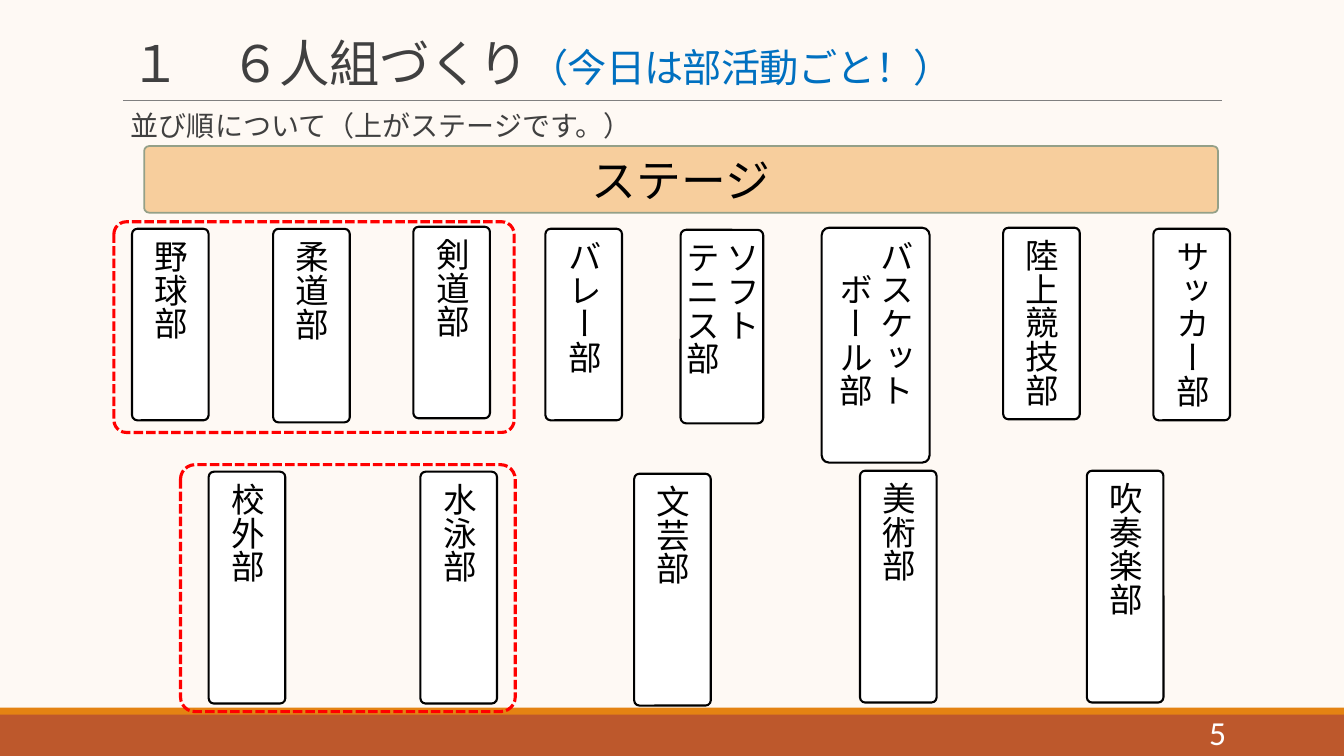
from dataclasses import dataclass

from lxml.etree import SubElement
from pptx import Presentation
from pptx.dml.color import RGBColor
from pptx.enum.dml import MSO_LINE
from pptx.enum.shapes import MSO_CONNECTOR, MSO_SHAPE as Preset
from pptx.enum.text import MSO_ANCHOR as Anchor, PP_ALIGN as Align
from pptx.oxml.ns import qn
from pptx.util import Inches, Pt

JAPANESE = "Noto Sans CJK JP"
LATIN = "Calibri"
DARK, BLACK, WHITE = "404040", "000000", "FFFFFF"


@dataclass
class Area:
    left: float
    top: float
    width: float
    height: float

    def lengths(self) -> list:
        return [Inches(n) for n in (self.left, self.top, self.width, self.height)]


@dataclass
class Club:
    """A club box; each line of the label is one vertical column."""
    label: str
    left: float
    top: float
    height: float = 1.9
    width: float = 0.76


CLUBS = [
    Club("野球部", 1.31, 2.27),
    Club("柔道部", 2.71, 2.27, 1.92),
    Club("剣道部", 4.1, 2.25),
    Club("バレー部", 5.41, 2.27),
    Club("ソフト\nテニス部", 6.75, 2.28, 1.92, 0.82),
    Club("バスケット\nボール部", 8.15, 2.26, 2.33, 1.07),
    Club("陸上競技部", 9.95, 2.26),
    Club("サッカー部", 11.44, 2.27),
    Club("校外部", 2.07, 4.68, 2.3),
    Club("水泳部", 4.17, 4.68, 2.3),
    Club("文芸部", 6.29, 4.7, 2.3),
    Club("美術部", 8.53, 4.67, 2.3),
    Club("吹奏楽部", 10.78, 4.67, 2.3),
]
FOOTER_BANDS = [
    (Area(0, 7.06, 13.33, 0.44), "BD582C"),
    (Area(0, 7.02, 13.33, 0.07), "E48312"),
]
GROUP_FRAMES = [Area(1.13, 2.2, 3.97, 2.09), Area(1.79, 4.61, 3.32, 2.45)]


def color(value: str) -> RGBColor:
    return RGBColor.from_string(value)


def style_span(span, size: float, ink: str, face: str = JAPANESE) -> None:
    span.font.size = Pt(size)
    span.font.color.rgb = color(ink)
    span.font.name = face
    SubElement(span.font._element, qn("a:ea")).set("typeface", face)


def add_box(page, preset, area: Area, fill: str = "", line: str = "",
            weight: float = 1.5, corner: float = 0):
    box = page.shapes.add_shape(preset, *area.lengths())
    box.shadow.inherit = False
    if corner:
        box.adjustments[0] = corner
    if fill:
        box.fill.solid()
        box.fill.fore_color.rgb = color(fill)
    else:
        box.fill.background()
    if line:
        box.line.color.rgb = color(line)
        box.line.width = Pt(weight)
    else:
        box.line.fill.background()
    return box


def add_label(page, area: Area, text: str, size: float, ink: str, anchor,
              face: str = JAPANESE):
    """Add a one-paragraph text box and return its paragraph."""
    frame = page.shapes.add_textbox(*area.lengths()).text_frame
    frame.word_wrap = True
    frame.vertical_anchor = anchor
    frame.text = text
    para = frame.paragraphs[0]
    style_span(para.runs[0], size, ink, face)
    return para


def add_title(page) -> None:
    para = add_label(page, Area(1.2, 0.31, 11, 0.66), "１　６人組づくり",
                     36, DARK, Anchor.BOTTOM)
    para.line_spacing = 0.85
    aside = para.add_run()
    aside.text = "（今日は部活動ごと！）"
    style_span(aside, 28, "0070C0")
    for span in para.runs:
        span.font._element.set("spc", "-50")


def add_title_rule(page) -> None:
    rule = page.shapes.add_connector(MSO_CONNECTOR.STRAIGHT, Inches(1.22),
                                     Inches(1), Inches(12.12), Inches(1))
    rule.line.color.rgb = color("808080")
    rule.line.width = Pt(0.5)
    SubElement(rule._element.spPr, qn("a:effectLst"))


def add_stage(page) -> None:
    stage = add_box(page, Preset.ROUNDED_RECTANGLE, Area(1.43, 1.45, 10.65, 0.66),
                    "F7CE9D", "94A088", 1.25, 0.072)
    frame = stage.text_frame
    frame.text = "ステージ"
    frame.vertical_anchor = Anchor.MIDDLE
    frame.paragraphs[0].alignment = Align.CENTER
    style_span(frame.paragraphs[0].runs[0], 32, BLACK)


def add_club(page, club: Club) -> None:
    area = Area(club.left, club.top, club.width, club.height)
    box = add_box(page, Preset.ROUNDED_RECTANGLE, area, WHITE, BLACK, corner=0.068)
    frame = box.text_frame
    frame.text = club.label
    frame.vertical_anchor = Anchor.MIDDLE
    frame._txBody.bodyPr.set("vert", "eaVert")
    columns = frame.paragraphs
    alignments = [Align.CENTER] if len(columns) == 1 else [Align.LEFT, Align.RIGHT]
    for para, alignment in zip(columns, alignments):
        para.alignment = alignment
        style_span(para.runs[0], 24, BLACK)


def main() -> None:
    deck = Presentation()
    deck.slide_width, deck.slide_height = Inches(13.33), Inches(7.5)
    page = deck.slides.add_slide(deck.slide_layouts[6])
    page.background.fill.solid()
    page.background.fill.fore_color.rgb = color("FEF9F4")

    for area, fill in FOOTER_BANDS:
        add_box(page, Preset.RECTANGLE, area, fill)
    add_title_rule(page)
    add_title(page)
    subtitle = add_label(page, Area(1.2, 1.07, 11, 0.4),
                         "並び順について（上がステージです。）", 20, DARK, Anchor.TOP)
    subtitle.line_spacing = 0.9
    number = add_label(page, Area(10.83, 7.06, 1.43, 0.4), "5", 24, WHITE,
                       Anchor.MIDDLE, LATIN)
    number.alignment = Align.RIGHT

    add_stage(page)
    for club in CLUBS:
        add_club(page, club)
    for area in GROUP_FRAMES:
        frame = add_box(page, Preset.ROUNDED_RECTANGLE, area, line="FF0000",
                        weight=2.25, corner=0.059)
        frame.line.dash_style = MSO_LINE.SQUARE_DOT
    deck.save("out.pptx")


if __name__ == "__main__":
    main()
